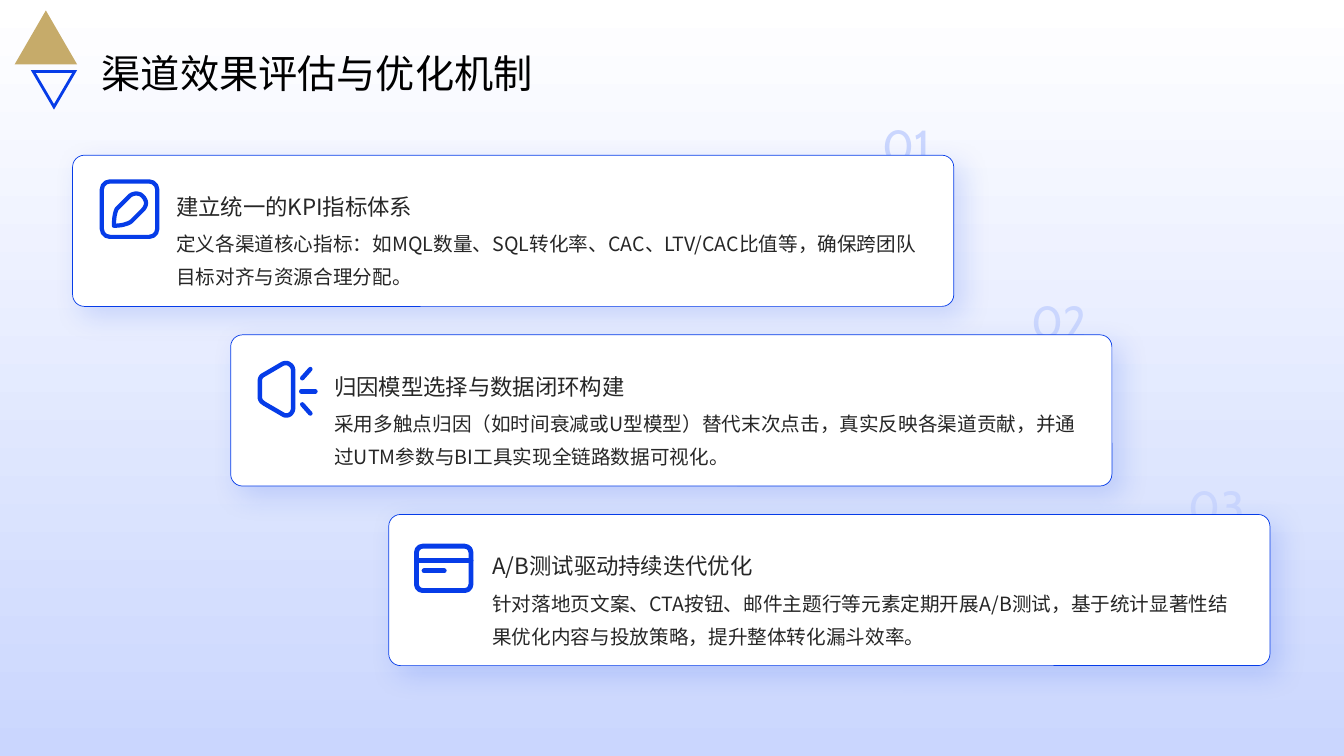
import pptx
import pptx.dml.color
import pptx.enum.shapes
import pptx.enum.text
import pptx.util
import lxml.etree

CELL = pptx.util.Inches(0.01)  # grid of 1333 columns by 750 rows
MIL = CELL / 10                # unit of the icon drawings
BLUE, PALE, GOLD, WHITE, DARK = "063CE8", "CAD6FE", "C6AB6A", "FFFFFF", "262626"
SANS = "Noto Sans CJK SC"
KIND = pptx.enum.shapes.MSO_SHAPE
ANCHOR = pptx.enum.text.MSO_ANCHOR
ALIGN = pptx.enum.text.PP_ALIGN
NS = "{http://schemas.openxmlformats.org/drawingml/2006/main}"


def paint(fill, tint):
    """Give a shape, line or font fill a hex colour, or none."""
    if tint is None:
        fill.background()
    else:
        fill.solid()
        fill.fore_color.rgb = pptx.dml.color.RGBColor.from_string(tint)


def write(shape, text, size, tint, face=SANS, gap=1.3, anchor=ANCHOR.BOTTOM,
          align=ALIGN.LEFT, inset=0):
    frame = shape.text_frame
    frame.auto_size = pptx.enum.text.MSO_AUTO_SIZE.NONE
    frame.word_wrap = True
    frame.vertical_anchor = anchor
    frame.margin_left = frame.margin_right = inset * CELL
    frame.margin_top = frame.margin_bottom = inset * CELL // 2
    para = frame.paragraphs[0]
    para.alignment, para.line_spacing = align, gap
    run = para.add_run()
    run.text = text
    run.font.size, run.font.name = pptx.util.Pt(size), face
    paint(run.font.fill, tint)
    lxml.etree.SubElement(run.font._element, NS + "ea", typeface=face)


deck = pptx.Presentation()
deck.slide_width, deck.slide_height = 1333 * CELL, 750 * CELL
slide = deck.slides.add_slide(deck.slide_layouts[5])
shapes = slide.shapes

# Backdrop
back = shapes.add_shape(KIND.RECTANGLE, 0, 0, deck.slide_width, deck.slide_height)
back.shadow.inherit = False
paint(back.line.fill, None)
back.fill.gradient()
back.fill.gradient_angle = 270
for stop, tint in zip(back.fill.gradient_stops, (WHITE, PALE)):
    stop.color.rgb = pptx.dml.color.RGBColor.from_string(tint)

# Title, lifted above the backdrop, and its two triangles
title = shapes.title
shapes._spTree.append(title._element)
title.left, title.top, title.width, title.height = [
    n * CELL for n in (91, 36, 1139, 58)]
write(title, "渠道效果评估与优化机制", 28, "000000", anchor=ANCHOR.MIDDLE, inset=10)

for box, turn, tint, edge, thick in (
        ((16, 12, 59, 51), 0, GOLD, GOLD, 1.2),
        ((33, 71, 41, 35), 180, None, BLUE, 2)):
    mark = shapes.add_shape(KIND.ISOSCELES_TRIANGLE, *[n * CELL for n in box])
    mark.shadow.inherit = False
    mark.rotation = turn
    paint(mark.fill, tint)
    paint(mark.line.fill, edge)
    mark.line.width = pptx.util.Pt(thick)
    lxml.etree.SubElement(mark.line._get_or_add_ln(), NS + "miter", lim="800000")

# Icons: rounded frame, closed outline (a pair is a line, six numbers a curve), strokes
PEN = {
    "frame": (20, 20, 550, 550, 0.145),
    "curve": [(360, 140), (390, 140, 410, 150, 425, 165),
              (470, 210, 470, 260, 425, 305), (315, 415),
              (280, 445, 200, 460, 140, 460), (140, 400, 150, 310, 175, 285),
              (295, 165), (310, 150, 340, 140, 360, 140)],
    "lines": [], "thick": 3}
HORN = {
    "frame": None,
    "curve": [(280, 20), (310, 20, 350, 50, 350, 90), (350, 460),
              (350, 510, 320, 540, 280, 540), (260, 540, 250, 530, 240, 525),
              (60, 420), (30, 400, 20, 380, 20, 360), (20, 200),
              (20, 170, 30, 150, 60, 135), (240, 30),
              (250, 25, 260, 20, 280, 20)],
    "lines": [(440, 430, 520, 520), (430, 300, 570, 300), (440, 170, 520, 80)],
    "thick": 3.2}
CARD = {
    "frame": (25, 25, 540, 440, 0.14), "curve": [],
    "lines": [(25, 165, 565, 165), (100, 270, 300, 270)], "thick": 3.5}

# Each step: number, its column and row, icon, icon offset in the card, heading, body
steps = [
    ("01", 832, 113, PEN, (27, 24), "建立统一的KPI指标体系",
     "定义各渠道核心指标：如MQL数量、SQL转化率、CAC、LTV/CAC比值等，确保跨团队目标对齐与资源合理分配。"),
    ("02", 987, 288, HORN, (27, 26), "归因模型选择与数据闭环构建",
     "采用多触点归因（如时间衰减或U型模型）替代末次点击，真实反映各渠道贡献，并通过UTM参数与BI工具实现全链路数据可视化。"),
    ("03", 1144, 471, CARD, (25, 29), "A/B测试驱动持续迭代优化",
     "针对落地页文案、CTA按钮、邮件主题行等元素定期开展A/B测试，基于统计显著性结果优化内容与投放策略，提升整体转化漏斗效率。"),
]

for i, (num, col, row, icon, shift, head, body) in enumerate(steps):
    left, top = 72 + 156.8 * i, 154 + 178.2 * i

    label = shapes.add_textbox(*[n * CELL for n in (col, row, 91, 57)])
    write(label, num, 32, PALE, "Cabin", align=ALIGN.RIGHT)

    panel = shapes.add_shape(KIND.ROUNDED_RECTANGLE,
                             *[int(n * CELL) for n in (left, top, 874, 150)])
    panel.adjustments[0] = 0.078
    paint(panel.fill, WHITE)
    paint(panel.line.fill, BLUE)
    panel.line.width = pptx.util.Pt(0.5)
    panel.shadow.inherit = False
    glow = lxml.etree.SubElement(
        panel._element.spPr.find(NS + "effectLst"), NS + "outerShdw",
        blurRad="254000", dist="101600", dir="2700000", algn="tl", rotWithShape="0")
    hue = lxml.etree.SubElement(glow, NS + "srgbClr", val=BLUE)
    lxml.etree.SubElement(hue, NS + "alpha", val="15000")

    name = shapes.add_textbox(
        *[int(n * CELL) for n in (left + 102.7, top + 24.3, 748, 40)])
    write(name, head, 16, DARK)
    note = shapes.add_textbox(
        *[int(n * CELL) for n in (left + 102.7, top + 67.2, 748, 59)])
    write(note, body, 14, DARK, gap=1.4, anchor=ANCHOR.TOP)

    x, y = int((left + shift[0]) * CELL), int((top + shift[1]) * CELL)
    parts = []
    if icon["frame"]:
        *box, bend = icon["frame"]
        a, b, wide, high = [int(n * MIL) for n in box]
        frame = shapes.add_shape(KIND.ROUNDED_RECTANGLE, x + a, y + b, wide, high)
        frame.adjustments[0] = bend
        parts.append(frame)
    if icon["curve"]:
        dots = [icon["curve"][0]]
        for seg in icon["curve"][1:]:
            if len(seg) == 2:
                dots.append(seg)
                continue
            ends = [dots[-1], seg[:2], seg[2:4], seg[4:]]
            for t in [k / 8 for k in range(1, 9)]:
                pull = ((1 - t) ** 3, 3 * t * (1 - t) ** 2, 3 * t * t * (1 - t), t ** 3)
                dots.append(tuple(sum(w * p[axis] for w, p in zip(pull, ends))
                                  for axis in (0, 1)))
        pen = shapes.build_freeform(*dots[0], scale=MIL)
        pen.add_line_segments(dots[1:], close=True)
        parts.append(pen.convert_to_shape(x, y))
    for part in parts:
        part.shadow.inherit = False
        paint(part.fill, None)
    for line in icon["lines"]:
        a, b, c, d = [int(n * MIL) for n in line]
        ray = shapes.add_connector(pptx.enum.shapes.MSO_CONNECTOR.STRAIGHT,
                                   x + a, y + b, x + c, y + d)
        parts.append(ray)
    for part in parts:
        paint(part.line.fill, BLUE)
        part.line.width = pptx.util.Pt(icon["thick"])
        edge = part.line._get_or_add_ln()
        edge.set("cap", "rnd")
        lxml.etree.SubElement(edge, NS + "round")
        if part._element.spPr.find(NS + "effectLst") is None:
            lxml.etree.SubElement(part._element.spPr, NS + "effectLst")

deck.save("out.pptx")
